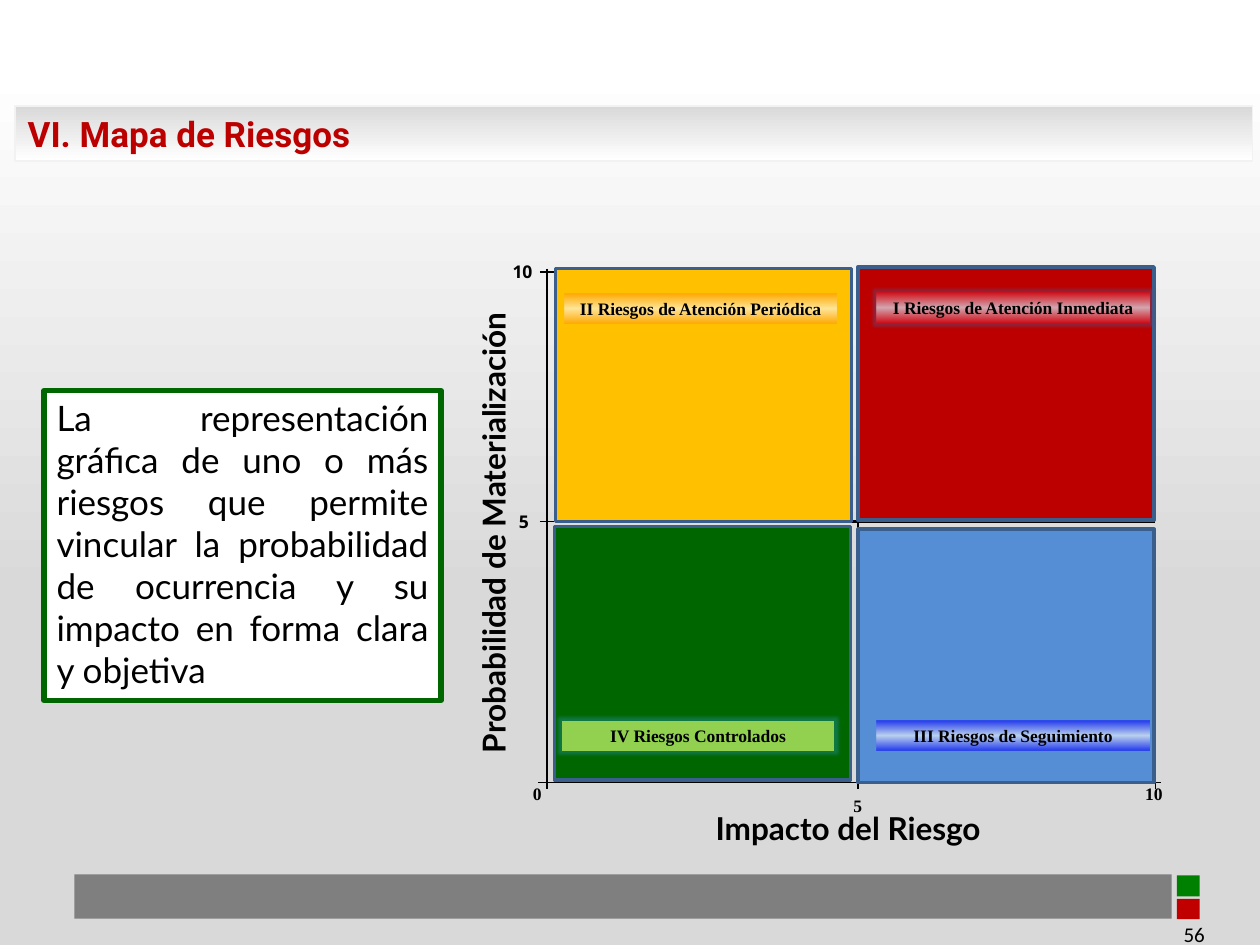
import pptx
import pptx.util
import pptx.dml.color
import pptx.enum.shapes
import pptx.enum.text
import pptx.oxml
import pptx.oxml.ns

Pt = pptx.util.Pt
SHAPE = pptx.enum.shapes.MSO_SHAPE
ALIGN = pptx.enum.text.PP_ALIGN
ANCHOR = pptx.enum.text.MSO_ANCHOR

COLORS = {
    "black": "000000", "white": "FFFFFF", "silver": "D9D9D9", "edge": "F2F2F2",
    "grey": "7F7F7F", "green": "006600", "badge_green": "008000",
    "badge_red": "C00000", "red": "BC0000", "yellow": "FFC000", "blue": "558ED5",
    "border": "3A5F8C", "label_red": "FF0000", "label_orange": "FF9900",
    "label_blue": "0000FF", "label_green": "92D050",
    "glow_purple": "604A7B", "glow_teal": "1F8A8A",
}


def rgb(name):
    return pptx.dml.color.RGBColor.from_string(COLORS[name])


def element(xml):
    return pptx.oxml.parse_xml(xml.replace(">", f" {pptx.oxml.ns.nsdecls('a')}>", 1))


def set_gradient(sp, stops, angle, alpha=100):
    gs = "".join(
        f'<a:gs pos="{pos * 1000}"><a:srgbClr val="{COLORS[name]}">'
        f'<a:alpha val="{alpha * 1000}"/></a:srgbClr></a:gs>'
        for pos, name in stops)
    sp.fill.background()
    old = sp.element.spPr.find(pptx.oxml.ns.qn("a:noFill"))
    old.getparent().replace(old, element(
        f'<a:gradFill><a:gsLst>{gs}</a:gsLst>'
        f'<a:lin ang="{angle * 60000}" scaled="0"/></a:gradFill>'))


def set_glow(sp, name, radius):
    effects = sp.element.spPr.find(pptx.oxml.ns.qn("a:effectLst"))
    effects.append(element(
        f'<a:glow rad="{Pt(radius)}"><a:srgbClr val="{COLORS[name]}">'
        f'<a:alpha val="50000"/></a:srgbClr></a:glow>'))


def set_text(sp, text, size, font, color="black", bold=False,
             align=ALIGN.LEFT, anchor=ANCHOR.TOP, wrap=True):
    tf = sp.text_frame
    tf.text = text
    tf.word_wrap = wrap
    tf.vertical_anchor = anchor
    p = tf.paragraphs[0]
    p.alignment = align
    r = p.runs[0]
    r.font.size = Pt(size)
    r.font.name = font
    r.font.bold = bold
    r.font.color.rgb = rgb(color)


def add_box(s, x, y, w, h, fill=None, line=None, weight=1, kind=SHAPE.RECTANGLE):
    sp = s.shapes.add_shape(kind, Pt(x), Pt(y), Pt(w), Pt(h))
    sp.shadow.inherit = False
    if fill:
        sp.fill.solid()
        sp.fill.fore_color.rgb = rgb(fill)
    if line:
        sp.line.color.rgb = rgb(line)
        sp.line.width = Pt(weight)
    else:
        sp.line.fill.background()
    return sp


def add_text(s, x, y, w, h, text, size, font, **style):
    sp = s.shapes.add_textbox(Pt(x), Pt(y), Pt(w), Pt(h))
    set_text(sp, text, size, font, **style)
    return sp


def add_line(s, x1, y1, x2, y2, weight):
    cn = s.shapes.add_connector(pptx.enum.shapes.MSO_CONNECTOR.STRAIGHT,
                                Pt(x1), Pt(y1), Pt(x2), Pt(y2))
    cn.line.color.rgb = rgb("black")
    cn.line.width = Pt(weight)
    cn.element.spPr.append(element("<a:effectLst></a:effectLst>"))


def add_backdrop(s, x, y, w, h):
    sp = add_box(s, x, y, w, h)
    set_gradient(sp, [(0, "silver"), (37, "silver"), (93, "white")], 270)


def add_footer(s, x, y, w, h):
    add_box(s, x, y, w - 20, h, "grey")
    add_box(s, x + w - 17, y + 0.5, 13, 12, "badge_green")
    add_box(s, x + w - 17, y + 14, 13, 11.5, "badge_red")
    add_text(s, x + w - 156, y + 19.5, 162, 28.8, "56", 12, "Calibri",
             align=ALIGN.RIGHT, anchor=ANCHOR.MIDDLE)


def place_title(s, x, y, w, h):
    sp = s.shapes.title
    sp.element.getparent().append(sp.element)
    sp.left, sp.top, sp.width, sp.height = Pt(x), Pt(y), Pt(w), Pt(h)
    set_gradient(sp, [(0, "white"), (100, "silver")], 270)
    sp.line.color.rgb = rgb("edge")
    sp.line.width = Pt(0.75)
    set_text(sp, "VI. Mapa de Riesgos", 20, "Roboto", color="red", bold=True,
             anchor=ANCHOR.MIDDLE)


def add_definition(s, x, y, w, h):
    sp = add_box(s, x, y, w, h, "white", "green", 3)
    set_text(sp, "La representación gráfica de uno o más riesgos que permite vincular "
             "la probabilidad de ocurrencia y su impacto en forma clara y objetiva",
             20, "Lato", align=ALIGN.JUSTIFY)


def add_quadrant(s, x, y, fill, label_dx, label_dy, text, tint, glow):
    add_box(s, x, y, 169.2, 144.7, fill, "border", 2)
    sp = add_box(s, x + label_dx, y + label_dy, 155.5, 17.3, "label_green",
                 kind=SHAPE.ACTION_BUTTON_CUSTOM)
    if tint:
        set_gradient(sp, [(0, tint), (50, "white"), (100, tint)], 90, 60)
    if glow:
        set_glow(sp, glow, 4)
    set_text(sp, text, 10, "Times New Roman", bold=True, align=ALIGN.CENTER,
             anchor=ANCHOR.MIDDLE, wrap=False)


def add_risk_map(s, x, y, w, h):
    mid_x, mid_y, right, bottom = x + 177.8, y + 142.6, x + w, y + h
    add_line(s, mid_x, y, mid_x, bottom - 8, 1.5)
    add_line(s, x + 8.6, mid_y, right, mid_y, 1.5)
    add_line(s, x, y - 2, x, bottom + 4, 0.75)
    add_line(s, right + 3, bottom, x - 5, bottom, 0.75)
    for tick in (mid_x, right):
        add_line(s, tick, bottom - 4, tick, bottom + 4, 0.75)
    for tick in (y, mid_y):
        add_line(s, x - 4, tick, x + 4, tick, 0.75)

    scale = [
        ("10", x - 26.7, y - 10.1, 28.1, "Open Sans"),
        ("5", x - 23.1, y + 133.2, 20.9, "Open Sans"),
        ("0", x - 15.1, bottom - 2.9, 19.4, "Times New Roman"),
        ("5", mid_x - 9.7, bottom + 3.6, 19.4, "Times New Roman"),
        ("10", right - 12.9, bottom - 2.9, 24.5, "Times New Roman"),
    ]
    for text, left, top, width, font in scale:
        add_text(s, left, top, width, 19.4, text, 10, font, bold=True, wrap=False)

    add_text(s, x + 89.3, bottom + 11.5, 173.5, 28.8, "Impacto del Riesgo",
             18, "Lato", bold=True, wrap=False)
    sp = add_text(s, x - 170.7, y + 127.5, 280, 28.8, "Probabilidad de Materialización",
                  18, "Lato", bold=True, wrap=False)
    sp.rotation = 270

    quadrants = [
        (177.8, -2.9, "red", 10.8, 14.4, "I Riesgos de Atención Inmediata",
         "label_red", "glow_purple"),
        (5, -2.2, "yellow", 5, 14.4, "II Riesgos de Atención Periódica",
         "label_orange", None),
        (177.8, 146.9, "blue", 10.8, 109.4, "III Riesgos de Seguimiento",
         "label_blue", None),
        (4.3, 145.4, "green", 4.3, 110.9, "IV Riesgos Controlados",
         None, "glow_teal"),
    ]
    for dx, dy, *details in quadrants:
        add_quadrant(s, x + dx, y + dy, *details)


def main():
    prs = pptx.Presentation()
    prs.slide_width, prs.slide_height = Pt(720), Pt(540)
    s = prs.slides.add_slide(prs.slide_layouts[5])
    add_backdrop(s, 0, 0, 720, 540)
    add_footer(s, 42.5, 499.7, 647, 25.2)
    add_definition(s, 25.2, 223.2, 226.8, 177.1)
    place_title(s, 8.6, 60.5, 707, 31.5)
    add_risk_map(s, 312.5, 155.5, 347.7, 291.6)
    prs.save("out.pptx")


if __name__ == "__main__":
    main()
